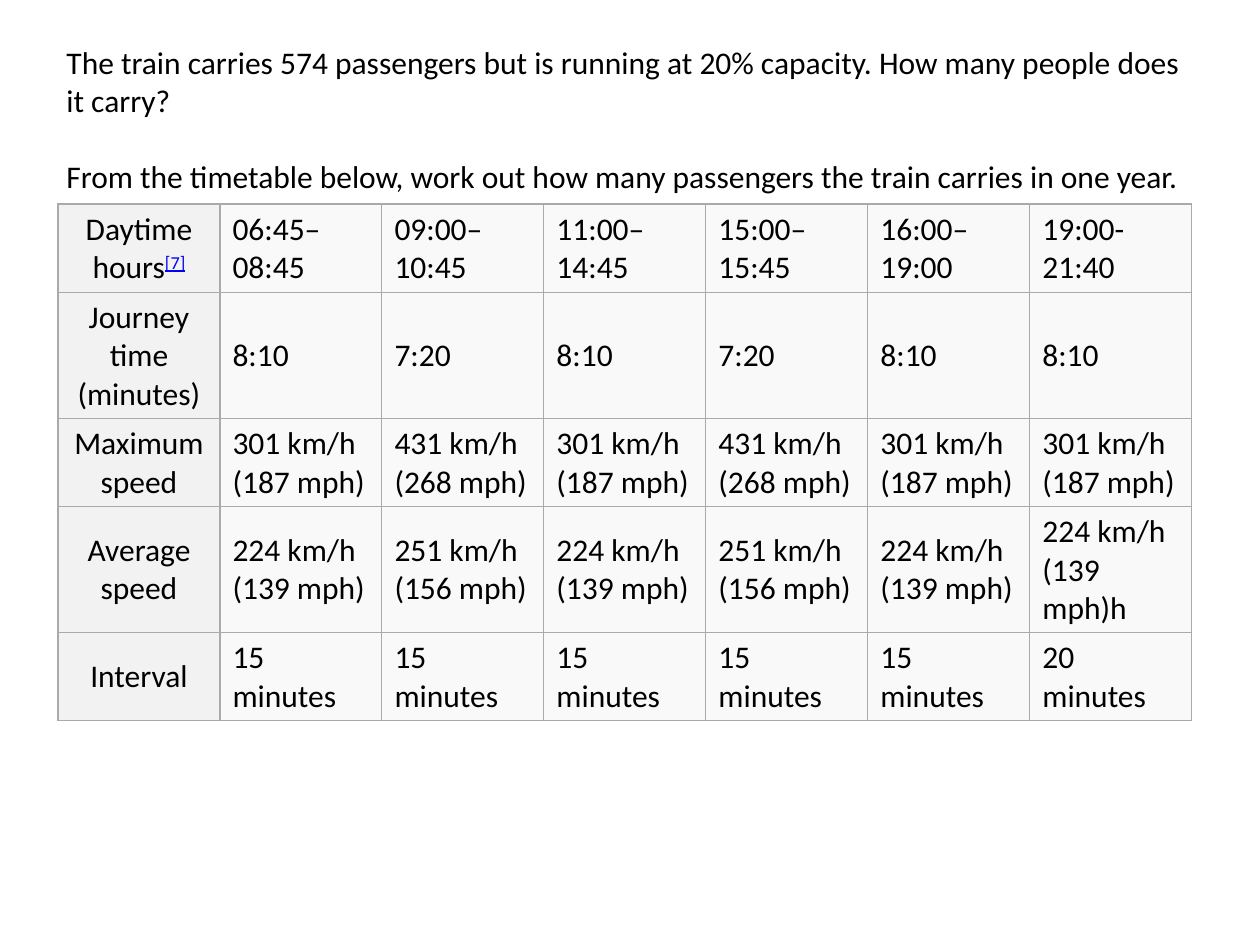
from lxml import etree
from pptx import Presentation
from pptx.dml.color import RGBColor
from pptx.enum.text import MSO_ANCHOR, MSO_AUTO_SIZE, PP_ALIGN
from pptx.oxml.ns import qn
from pptx.util import Pt

MID = MSO_ANCHOR.MIDDLE
GROW = MSO_AUTO_SIZE.SHAPE_TO_FIT_TEXT
LEFT, CENTER = PP_ALIGN.LEFT, PP_ALIGN.CENTER
PX = 914400 // 126

TASKS = [
    "The train carries 574 passengers but is running at 20% capacity. How many people does it carry?",
    "From the timetable below, work out how many passengers the train carries in one year.",
]
NOTE = "[7]"
SLOW, FAST = "301 km/h (187 mph)", "431 km/h (268 mph)"
LOW, HIGH = "224 km/h (139 mph)", "251 km/h (156 mph)"
ROWS = [
    ("Daytime hours", "06:45–08:45", "09:00–10:45", "11:00–14:45",
     "15:00–15:45", "16:00–19:00", "19:00-21:40"),
    ("Journey time (minutes)", "8:10", "7:20", "8:10", "7:20", "8:10", "8:10"),
    ("Maximum speed", SLOW, FAST, SLOW, FAST, SLOW, SLOW),
    ("Average speed", LOW, HIGH, LOW, HIGH, LOW, LOW + "h"),
    ("Interval", *["15 minutes"] * 5, "20 minutes"),
]
TALL = [88, 126, 88, 126, 88]
WIDE = 162


def px(*nums):
    return [round(n * PX) for n in nums]


def color(code):
    return RGBColor.from_string(code)


def write(para, text, ink="000000", align=LEFT, line=False, lift=0):
    para.alignment = align
    run = para.add_run()
    run.text = text
    font = run.font
    font.name, font.size, font.bold = "Calibri", Pt(18), False
    font.color.rgb = color(ink)
    if line:
        font.underline = True
    if lift:
        run._r.get_or_add_rPr().set("baseline", str(lift * 1000))


def frame(cell, ink="AAAAAA"):
    props = cell._tc.get_or_add_tcPr()
    for side in ("lnL", "lnR", "lnT", "lnB"):
        edge = etree.SubElement(props, qn("a:" + side), w=str(Pt(0.75)))
        fill = etree.SubElement(edge, qn("a:solidFill"))
        etree.SubElement(fill, qn("a:srgbClr"), val=ink)


def paint(cell, code):
    cell.fill.solid()
    cell.fill.fore_color.rgb = color(code)


deck = Presentation()
deck.slide_width, deck.slide_height = px(1260, 945)
slide = deck.slides.add_slide(deck.slide_layouts[6])

body = slide.shapes.add_textbox(*px(54, 37, 1142, 204)).text_frame
body.word_wrap = True
body.auto_size = GROW
for i, task in enumerate(TASKS):
    para = body.add_paragraph() if i else body.paragraphs[0]
    para.space_before = Pt(22 * i)
    write(para, task)

cols = len(ROWS[0])
grid = slide.shapes.add_table(
    len(ROWS), cols, *px(58, 204, WIDE * cols, sum(TALL))).table
grid.first_row = grid.horz_banding = False
for col in grid.columns:
    col.width = px(WIDE)[0]
for r, (row, tall) in enumerate(zip(ROWS, TALL)):
    grid.rows[r].height = px(tall)[0]
    for c, text in enumerate(row):
        cell = grid.cell(r, c)
        frame(cell)
        paint(cell, "F9F9F9" if c else "F2F2F2")
        cell.vertical_anchor = MID
        write(cell.text_frame.paragraphs[0], text, align=LEFT if c else CENTER)

write(grid.cell(0, 0).text_frame.paragraphs[0], NOTE,
      ink="0000FF", align=CENTER, line=True, lift=30)

deck.save("out.pptx")
